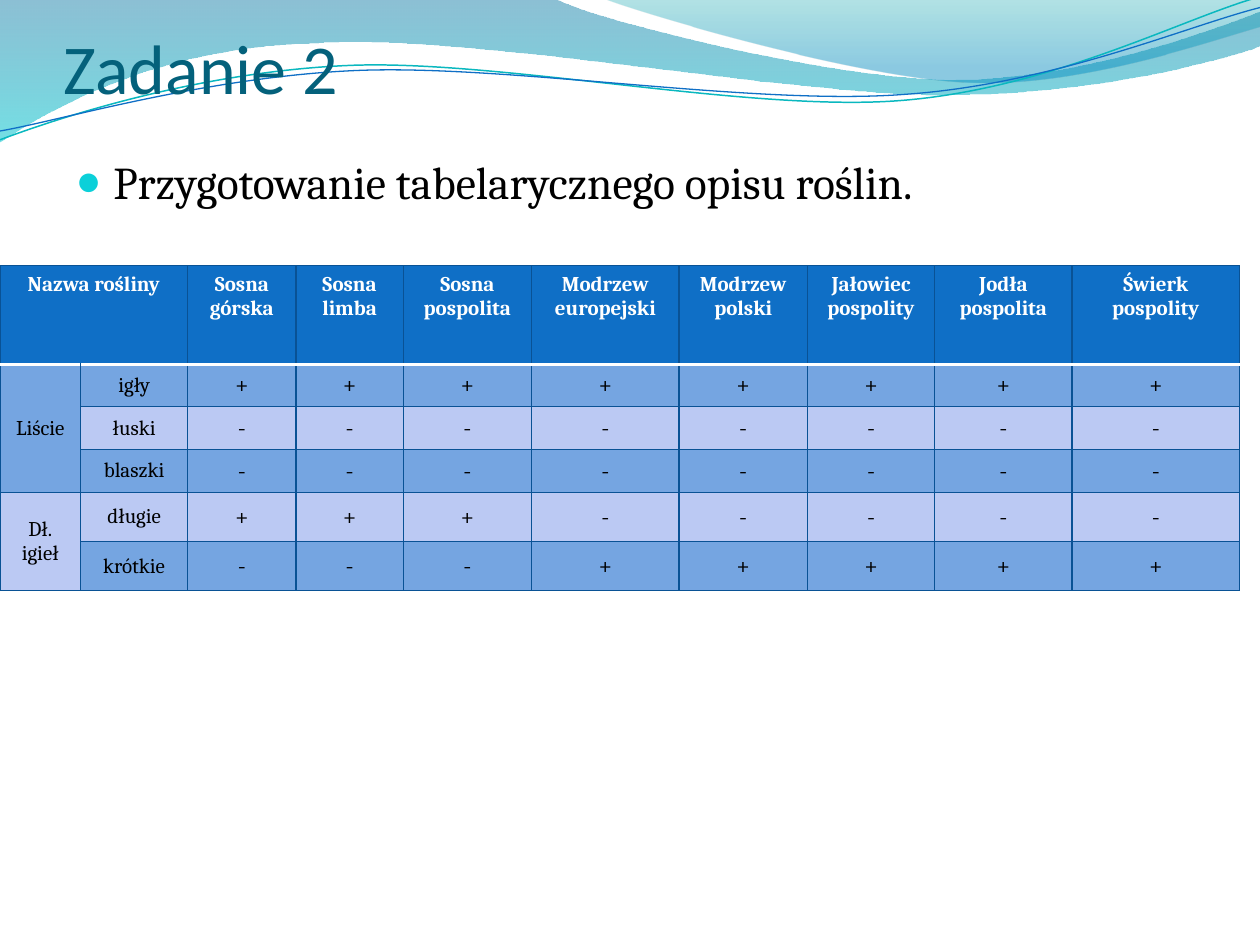
from lxml import etree
from pptx import Presentation
from pptx import util as u
from pptx.dml.color import RGBColor
from pptx.enum import text
from pptx.oxml.ns import qn

# Colours and fonts
BLUE = RGBColor(0x0F, 0x6F, 0xC6)
DARK_BAND = RGBColor(0x75, 0xA5, 0xE1)
LIGHT_BAND = RGBColor(0xBB, 0xC9, 0xF3)
BORDER = RGBColor(0x09, 0x52, 0x95)
TITLE = RGBColor(0x04, 0x61, 0x7B)
BULLET = RGBColor(0x0B, 0xD0, 0xD9)
TEAL = RGBColor(0x0A, 0xB8, 0xBF)
WHITE = RGBColor(0xFF, 0xFF, 0xFF)
BLACK = RGBColor(0, 0, 0)
HEAD_FONT, BODY_FONT = "Calibri", "Cambria"

# Content
HEADING = "Zadanie 2"
TASK = "Przygotowanie tabelarycznego opisu roślin."
ROWS = [
    ["Nazwa rośliny", "", "Sosna górska", "Sosna limba", "Sosna pospolita",
     "Modrzew\neuropejski", "Modrzew polski", "Jałowiec pospolity",
     "Jodła pospolita", "Świerk pospolity"],
    ["Liście", "igły", *"++++++++"],
    ["", "łuski", *"--------"],
    ["", "blaszki", *"--------"],
    ["Dł.\nigieł", "długie", *"+++-----"],
    ["", "krótkie", *"---+++++"],
]
MERGES = [((0, 0), (0, 1)), ((1, 0), (3, 0)), ((4, 0), (5, 0))]
COL_WIDTHS = [0.64, 0.85, 0.86, 0.85, 1.02, 1.17, 1.02, 1.01, 1.09, 1.33]
ROW_HEIGHTS = [0.78, 0.34, 0.34, 0.34, 0.39, 0.39]

# Waves in inches: a pair is a straight step, six numbers are a cubic curve
# Gradient stops: position, colour, opacity in percent
WAVES = [
    ([(0, 0), (4.4, -0.01), (4.76, 0.17, 6.64, 0.63, 7.58, 0.63),
      (8.53, 0.63, 9.58, 0.26, 10, 0.09), (10.01, 0.36),
      (9.83, 0.44, 8.7, 0.76, 7.46, 0.75), (6.22, 0.75, 3.82, 0.28, 2.57, 0.34),
      (1.29, 0.36, 0.46, 0.83, -0.01, 1.13)],
     [(0, RGBColor(0x00, 0x74, 0xA1), 45), (1, RGBColor(0x00, 0xC6, 0xCF), 55)]),
    ([(4.79, -0.01), (5.09, 0.11, 6.82, 0.62, 7.69, 0.65),
      (8.56, 0.69, 9.61, 0.32, 10, 0.21), (10, 0)],
     [(0, RGBColor(0x00, 0xA1, 0xA9), 30), (0.8, RGBColor(0x00, 0x8B, 0xBF), 45)]),
]
WAVE_LINES = [
    ([(0, 1.11), (0.48, 0.93, 1.58, 0.57, 2.77, 0.52),
      (3.95, 0.47, 5.93, 0.89, 7.13, 0.8), (8.33, 0.71, 9.38, 0.15, 9.98, -0.02)],
     TEAL, 0.85),
    ([(0, 1.04), (0.47, 0.96, 1.64, 0.61, 2.83, 0.56),
      (4.03, 0.51, 5.97, 0.84, 7.17, 0.75), (8.36, 0.67, 9.41, 0.21, 10, 0.06)],
     BLUE, 0.75),
]


def add_freeform(s, steps, close):
    """Draw the steps' end points, then bend the curved steps."""
    ends = [(u.Inches(step[-2]), u.Inches(step[-1])) for step in steps]
    builder = s.shapes.build_freeform(*ends[0])
    builder.add_line_segments(ends[1:], close=close)
    sp = builder.convert_to_shape()
    sp.shadow.inherit = False
    for line, step in zip(list(sp._element.iter(qn("a:lnTo"))), steps[1:]):
        if len(step) == 2:
            continue
        curve = etree.Element(qn("a:cubicBezTo"))
        for x, y in zip(step[::2], step[1::2]):
            etree.SubElement(curve, qn("a:pt"), x=str(u.Inches(x) - sp.left),
                             y=str(u.Inches(y) - sp.top))
        line.getparent().replace(line, curve)
    return sp


def add_border(cell, side, color, width):
    tcPr = cell._tc.get_or_add_tcPr()
    ln = etree.SubElement(tcPr, qn("a:ln" + side), w=str(u.Pt(width)))
    fill = etree.SubElement(ln, qn("a:solidFill"))
    etree.SubElement(fill, qn("a:srgbClr"), val=str(color))


def place(sp, left, top, width, height):
    sp.left, sp.top, sp.width, sp.height = map(u.Inches, (left, top, width, height))


def set_font(p, name, size, color, bold=False):
    p.font.name, p.font.size, p.font.bold = name, u.Pt(size), bold
    p.font.color.rgb = color


prs = Presentation()
prs.slide_width, prs.slide_height = u.Inches(10), u.Inches(7.5)
s = prs.slides.add_slide(prs.slide_layouts[1])
title, body = s.placeholders

# Background waves
for steps, stops in WAVES:
    sp = add_freeform(s, steps, True)
    sp.line.fill.background()
    sp.fill.gradient()
    sp.fill.gradient_angle = 270
    for stop, (position, color, _) in zip(sp.fill.gradient_stops, stops):
        stop.position, stop.color.rgb = position, color
    for clr, (_, _, opacity) in zip(sp._element.iter(qn("a:srgbClr")), stops):
        etree.SubElement(clr, qn("a:alpha"), val=str(opacity * 1000))
for steps, color, width in WAVE_LINES:
    sp = add_freeform(s, steps, False)
    sp.fill.background()
    sp.line.color.rgb, sp.line.width = color, u.Pt(width)

# Title and body stand in front of the waves
for sp in (title, body):
    s.shapes._spTree.append(sp._element)

# Title
place(title, 0.5, 0.3, 9, 0.56)
tf = title.text_frame
tf.text = HEADING
tf.auto_size = text.MSO_AUTO_SIZE.NONE
tf.vertical_anchor = text.MSO_ANCHOR.BOTTOM
tf.margin_left = tf.margin_right = tf.margin_bottom = 0
tf.margin_top = u.Inches(0.05)
p = tf.paragraphs[0]
p.alignment = text.PP_ALIGN.LEFT
set_font(p, HEAD_FONT, 40, TITLE)

# Bulleted task
place(body, 0.5, 1.17, 9, 5.53)
tf = body.text_frame
tf.text = TASK
tf.auto_size = text.MSO_AUTO_SIZE.NONE
p = tf.paragraphs[0]
set_font(p, BODY_FONT, 26, BLACK)
pPr = p._p.get_or_add_pPr()
pPr.set("marL", str(u.Inches(0.3)))
pPr.set("indent", str(-u.Inches(0.3)))
bullet = [etree.Element(qn("a:buClr")),
          etree.Element(qn("a:buSzPct"), val="95000"),
          etree.Element(qn("a:buChar"), char="●")]
etree.SubElement(bullet[0], qn("a:srgbClr"), val=str(BULLET))
for i, part in enumerate(bullet):
    pPr.insert(i, part)

# Plant table
table = s.shapes.add_table(len(ROWS), len(COL_WIDTHS), 0, u.Inches(2.11),
                           u.Inches(sum(COL_WIDTHS)),
                           u.Inches(sum(ROW_HEIGHTS))).table
for column, width in zip(table.columns, COL_WIDTHS):
    column.width = u.Inches(width)
for row, height in zip(table.rows, ROW_HEIGHTS):
    row.height = u.Inches(height)
for r, row in enumerate(ROWS):
    for c, value in enumerate(row):
        cell = table.cell(r, c)
        head = r == 0
        for side in "LRTB":
            white = (r, side) in ((0, "B"), (1, "T"))
            add_border(cell, side, WHITE if white else BORDER, 2 if white else 0.75)
        cell.fill.solid()
        cell.fill.fore_color.rgb = BLUE if head else DARK_BAND if r % 2 else LIGHT_BAND
        cell.vertical_anchor = text.MSO_ANCHOR.TOP if head else text.MSO_ANCHOR.MIDDLE
        cell.text = value
        for p in cell.text_frame.paragraphs:
            p.alignment = text.PP_ALIGN.CENTER
            set_font(p, BODY_FONT, 14 if value in ("+", "-") else 12,
                     WHITE if head else BLACK, head)
for first, last in MERGES:
    table.cell(*first).merge(table.cell(*last))

prs.save("out.pptx")
